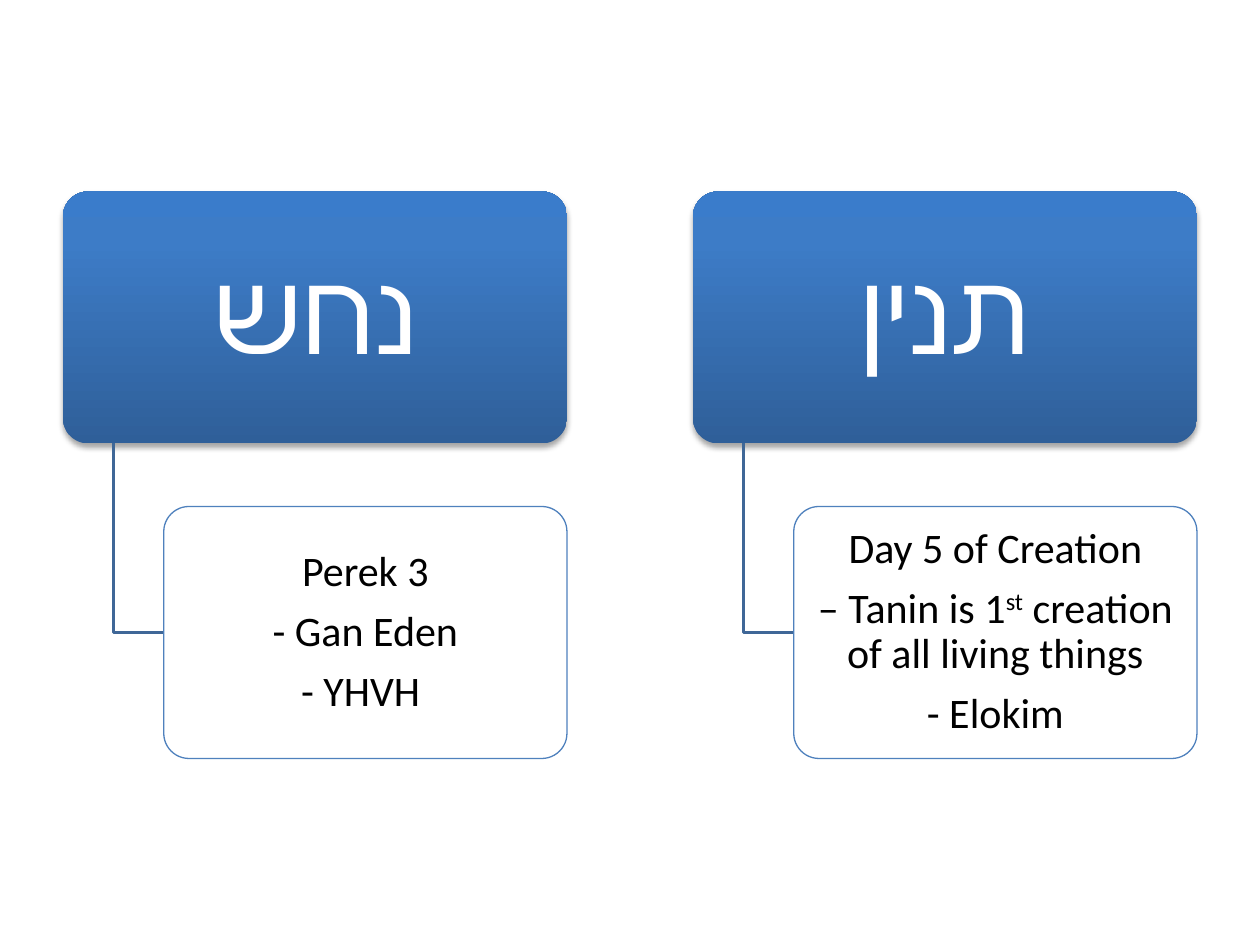
import dataclasses

import pptx
import pptx.dml.color
import pptx.enum.dml
import pptx.enum.shapes
import pptx.enum.text
import pptx.oxml
import pptx.oxml.ns
import pptx.util
from pptx.util import Inches

qn = pptx.oxml.ns.qn


@dataclasses.dataclass(frozen=True)
class Theme:
    font: str = "Calibri"
    heading_size: int = 65
    detail_size: int = 24
    heading_text: str = "FFFFFF"
    detail_text: str = "000000"
    heading_stops: tuple = ((0, "2F5F99"), (80, "3D7CC7"), (100, "3A7CCB"))
    detail_fill: str = "FFFFFF"
    detail_opacity: int = 90
    detail_border: str = "4F81BD"
    branch: str = "3F6797"
    shadow: str = "000000"
    shadow_opacity: int = 35


THEME = Theme()

TOPICS = [
    ("נחש", [["Perek 3"], ["- Gan Eden"], ["- YHVH "]]),
    ("תנין", [
        ["Day 5 of Creation"],
        ["– Tanin is 1", ("st", 30), " creation of all living things"],
        ["- Elokim"],
    ]),
]


def rgb(color):
    return pptx.dml.color.RGBColor.from_string(color)


def add_child(parent, tag, **attributes):
    child = pptx.oxml.parse_xml(
        f'<{tag} xmlns:a="http://schemas.openxmlformats.org/drawingml/2006/main"/>'
    )
    for name, value in attributes.items():
        child.set(name, str(value))
    parent.append(child)
    return child


def add_card(slide, left, top, width, height):
    card = slide.shapes.add_shape(
        pptx.enum.shapes.MSO_SHAPE.ROUNDED_RECTANGLE,
        Inches(left), Inches(top), Inches(width), Inches(height),
    )
    card.adjustments[0] = 0.1
    card.shadow.inherit = False
    return card


def write_paragraphs(card, paragraphs, size, color, margin_x, margin_y):
    frame = card.text_frame
    frame.word_wrap = True
    frame.vertical_anchor = pptx.enum.text.MSO_ANCHOR.MIDDLE
    frame.margin_left = frame.margin_right = Inches(margin_x)
    frame.margin_top = frame.margin_bottom = Inches(margin_y)
    for index, parts in enumerate(paragraphs):
        paragraph = frame.add_paragraph() if index else frame.paragraphs[0]
        paragraph.alignment = pptx.enum.text.PP_ALIGN.CENTER
        paragraph.line_spacing = 0.9
        paragraph.space_after = pptx.util.Pt(size * 0.35)
        if index == 0:
            paragraph._p.get_or_add_pPr().set("rtl", "1")
        for part in parts:
            text, raised = (part, 0) if isinstance(part, str) else part
            run = paragraph.add_run()
            run.text = text
            run.font.name = THEME.font
            run.font.size = pptx.util.Pt(size)
            run.font.color.rgb = rgb(color)
            properties = run.font._element
            add_child(properties, "a:cs", typeface=THEME.font)
            if raised:
                properties.set("baseline", str(raised * 1000))


def add_heading(slide, left, top, text):
    heading = add_card(slide, left, top, 4, 2)
    heading.line.fill.background()
    heading.fill.gradient()
    heading.fill.gradient_angle = 90
    properties = heading._element.spPr
    stops = properties.find(qn("a:gradFill")).find(qn("a:gsLst"))
    stops.clear()
    for position, color in THEME.heading_stops:
        stop = add_child(stops, "a:gs", pos=position * 1000)
        add_child(stop, "a:srgbClr", val=color)
    shadow = add_child(
        properties.find(qn("a:effectLst")), "a:outerShdw",
        blurRad=pptx.util.Pt(3.1), dist=pptx.util.Pt(1.8),
        dir=90 * 60000, rotWithShape=0,
    )
    shade = add_child(shadow, "a:srgbClr", val=THEME.shadow)
    add_child(shade, "a:alpha", val=THEME.shadow_opacity * 1000)
    write_paragraphs(
        heading, [[text]], THEME.heading_size, THEME.heading_text, 0.14, 0.09
    )


def add_branch(slide, left, top, width, height):
    x, y = Inches(left), Inches(top)
    corner_y = y + Inches(height)
    builder = slide.shapes.build_freeform(x, y)
    builder.add_line_segments(
        [(x, corner_y), (x + Inches(width), corner_y)], close=False
    )
    branch = builder.convert_to_shape()
    branch.shadow.inherit = False
    branch.fill.background()
    branch.line.color.rgb = rgb(THEME.branch)
    branch.line.width = pptx.util.Pt(2)


def add_detail(slide, left, top, paragraphs):
    detail = add_card(slide, left, top, 3.2, 2)
    detail.fill.solid()
    detail.fill.fore_color.rgb = rgb(THEME.detail_fill)
    fill_color = detail._element.spPr.find(qn("a:solidFill"))[0]
    add_child(fill_color, "a:alpha", val=THEME.detail_opacity * 1000)
    detail.line.color.rgb = rgb(THEME.detail_border)
    detail.line.width = pptx.util.Pt(0.75)
    write_paragraphs(
        detail, paragraphs, THEME.detail_size, THEME.detail_text, 0.05, 0.03
    )


def main():
    presentation = pptx.Presentation()
    presentation.slide_width = Inches(10)
    presentation.slide_height = Inches(7.5)
    slide = presentation.slides.add_slide(presentation.slide_layouts[6])
    top = 1.52
    for index, (heading, details) in enumerate(TOPICS):
        left = 0.5 + index * 5
        add_heading(slide, left, top, heading)
        add_branch(slide, left + 0.4, top + 2, 0.4, 1.5)
        add_detail(slide, left + 0.8, top + 2.5, details)
    presentation.save("out.pptx")


if __name__ == "__main__":
    main()
